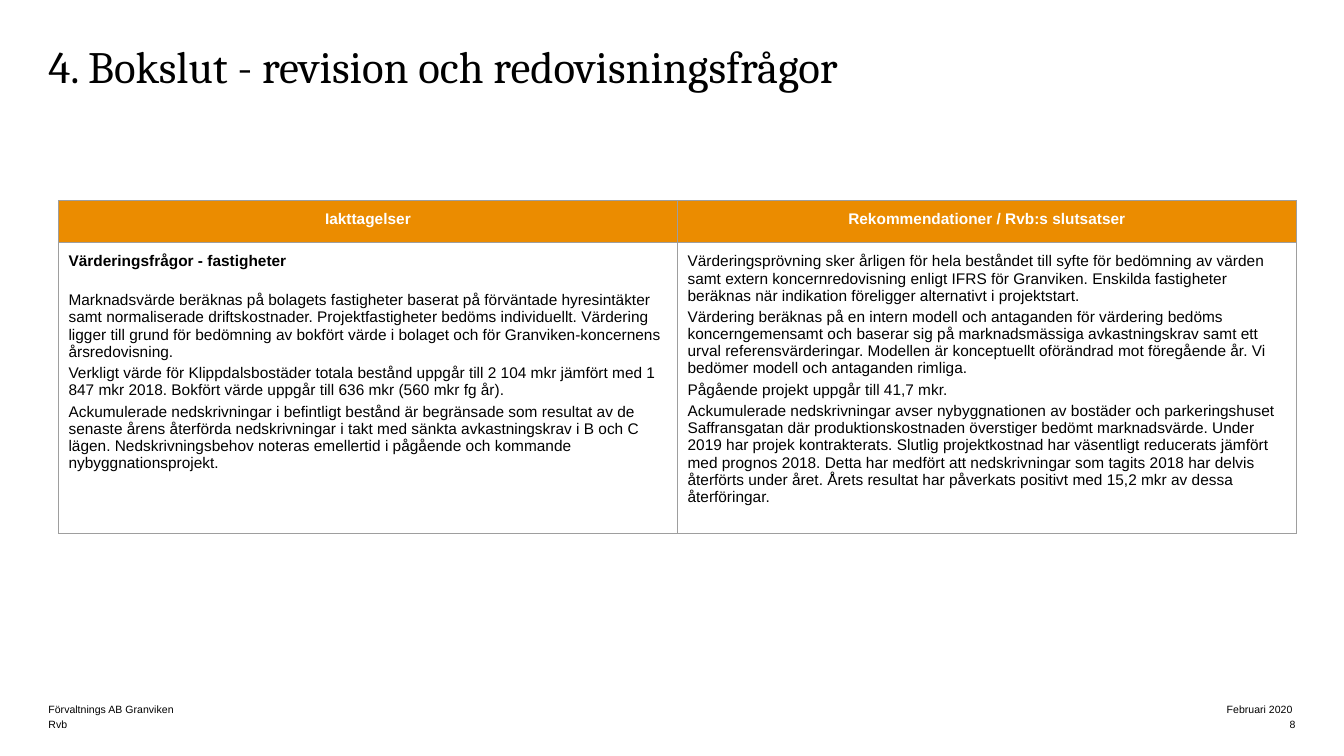
from dataclasses import dataclass

from lxml import etree
from pptx import Presentation
from pptx.dml.color import RGBColor
from pptx.enum.text import MSO_ANCHOR, MSO_AUTO_SIZE, PP_ALIGN
from pptx.oxml.ns import qn
from pptx.util import Inches, Pt

LEFT, CENTER, RIGHT = PP_ALIGN.LEFT, PP_ALIGN.CENTER, PP_ALIGN.RIGHT
TOP, BOTTOM = MSO_ANCHOR.TOP, MSO_ANCHOR.BOTTOM
NO_AUTOFIT = MSO_AUTO_SIZE.NONE
TITLE_ONLY = 5


@dataclass(frozen=True)
class Theme:
    title_font: str = "Cambria"
    body_font: str = "Arial"
    title_size: float = 32
    body_size: float = 11
    footer_size: float = 7.5
    black: str = "000000"
    white: str = "FFFFFF"
    orange: str = "EB8C00"
    border: str = "9E9E9E"
    border_width: float = 0.75


THEME = Theme()

HEADERS = ["Iakttagelser", "Rekommendationer / Rvb:s slutsatser"]
OBSERVATION_HEADING = "Värderingsfrågor - fastigheter"
OBSERVATIONS = [
    "Marknadsvärde beräknas på bolagets fastigheter baserat på förväntade hyresintäkter samt "
    "normaliserade driftskostnader. Projektfastigheter bedöms individuellt. Värdering ligger till "
    "grund för bedömning av bokfört värde i bolaget och för Granviken-koncernens årsredovisning.",
    "Verkligt värde för Klippdalsbostäder totala bestånd uppgår till 2 104 mkr jämfört med "
    "1 847 mkr 2018. Bokfört värde uppgår till 636 mkr (560 mkr fg år).",
    "Ackumulerade nedskrivningar i befintligt bestånd är begränsade som resultat av de senaste "
    "årens återförda nedskrivningar i takt med sänkta avkastningskrav i B och C lägen. "
    "Nedskrivningsbehov noteras emellertid i pågående och kommande nybyggnationsprojekt.",
]
RECOMMENDATIONS = [
    "Värderingsprövning sker årligen för hela beståndet till syfte för bedömning av värden samt "
    "extern koncernredovisning enligt IFRS för Granviken. Enskilda fastigheter beräknas när "
    "indikation föreligger alternativt i projektstart.",
    "Värdering beräknas på en intern modell och antaganden för värdering bedöms koncerngemensamt "
    "och baserar sig på marknadsmässiga avkastningskrav samt ett urval referensvärderingar. "
    "Modellen är konceptuellt oförändrad mot föregående år. Vi bedömer modell och antaganden "
    "rimliga.",
    "Pågående projekt uppgår till 41,7 mkr.",
    "Ackumulerade nedskrivningar avser nybyggnationen av bostäder och parkeringshuset "
    "Saffransgatan där produktionskostnaden överstiger bedömt marknadsvärde. Under 2019 har "
    "projek kontrakterats. Slutlig projektkostnad har väsentligt reducerats jämfört med prognos "
    "2018. Detta har medfört att nedskrivningar som tagits 2018 har delvis återförts under året. "
    "Årets resultat har påverkats positivt med 15,2 mkr av dessa återföringar.",
]


def write_text(paragraph, text, *, size=THEME.body_size, font=THEME.body_font, color=THEME.black,
               bold=False, align=LEFT, before=0, after=0, line_spacing=1.0):
    paragraph.alignment = align
    paragraph.space_before = Pt(before)
    paragraph.space_after = Pt(after)
    paragraph.line_spacing = line_spacing
    run = paragraph.add_run()
    run.text = text
    run.font.name = font
    run.font.size = Pt(size)
    run.font.bold = bold
    run.font.color.rgb = RGBColor.from_string(color)


def prepare_frame(shape, anchor, right_inset=0):
    frame = shape.text_frame
    frame.word_wrap = True
    frame.auto_size = NO_AUTOFIT
    frame.vertical_anchor = anchor
    frame.margin_left = frame.margin_top = frame.margin_bottom = 0
    frame.margin_right = Inches(right_inset)
    return frame.paragraphs[0]


def add_title(slide, text):
    title = slide.shapes.title
    title.left, title.top = Inches(0.48), Inches(0.47)
    title.width, title.height = Inches(12.36), Inches(0.73)
    write_text(prepare_frame(title, TOP), text, size=THEME.title_size,
               font=THEME.title_font, line_spacing=0.85)


def add_footer(slide, text, left, top, width, align=LEFT, right_inset=0):
    box = slide.shapes.add_textbox(Inches(left), Inches(top), Inches(width), Inches(0.15))
    write_text(prepare_frame(box, BOTTOM, right_inset), text, size=THEME.footer_size, align=align)


def set_borders(cell):
    properties = cell._tc.get_or_add_tcPr()
    for side in ("a:lnL", "a:lnR", "a:lnT", "a:lnB"):
        line = etree.SubElement(properties, qn(side), w=str(Pt(THEME.border_width)))
        fill = etree.SubElement(line, qn("a:solidFill"))
        etree.SubElement(fill, qn("a:srgbClr"), val=THEME.border)


def format_cell(cell, fill):
    cell.margin_left = cell.margin_right = Inches(0.1)
    cell.margin_top = cell.margin_bottom = Inches(0.1)
    cell.vertical_anchor = TOP
    set_borders(cell)
    cell.fill.solid()
    cell.fill.fore_color.rgb = RGBColor.from_string(fill)


def fill_body(cell, texts, heading=None):
    frame = cell.text_frame
    paragraph = frame.paragraphs[0]
    if heading:
        write_text(paragraph, heading, bold=True, before=3, after=12.5)
        paragraph = frame.add_paragraph()
    write_text(paragraph, texts[0], before=3)
    for text in texts[1:]:
        write_text(frame.add_paragraph(), text, before=3)


def add_findings_table(slide):
    table = slide.shapes.add_table(2, 2, Inches(0.58), Inches(1.99),
                                   Inches(12.28), Inches(3.3)).table
    table.rows[0].height = Inches(0.42)
    table.rows[1].height = Inches(2.88)
    for column, header in enumerate(HEADERS):
        table.columns[column].width = Inches(6.14)
        header_cell = table.cell(0, column)
        format_cell(header_cell, THEME.orange)
        write_text(header_cell.text_frame.paragraphs[0], header, color=THEME.white,
                   bold=True, align=CENTER, before=3, after=3)
        format_cell(table.cell(1, column), THEME.white)
    fill_body(table.cell(1, 0), OBSERVATIONS, OBSERVATION_HEADING)
    fill_body(table.cell(1, 1), RECOMMENDATIONS)


def main():
    presentation = Presentation()
    presentation.slide_width, presentation.slide_height = Inches(13.33), Inches(7.5)
    slide = presentation.slides.add_slide(presentation.slide_layouts[TITLE_ONLY])

    # Title and table
    add_title(slide, "4. Bokslut - revision och redovisningsfrågor")
    add_findings_table(slide)

    # Footer: client and firm on the left, date and page on the right
    add_footer(slide, "Förvaltnings AB Granviken", 0.48, 6.95, 5.99)
    add_footer(slide, "Rvb", 0.48, 7.1, 5.99)
    add_footer(slide, "Februari 2020", 8.99, 6.95, 3.86, RIGHT, right_inset=0.03)
    add_footer(slide, "8", 8.99, 7.1, 3.86, RIGHT)

    presentation.save("out.pptx")


if __name__ == "__main__":
    main()
